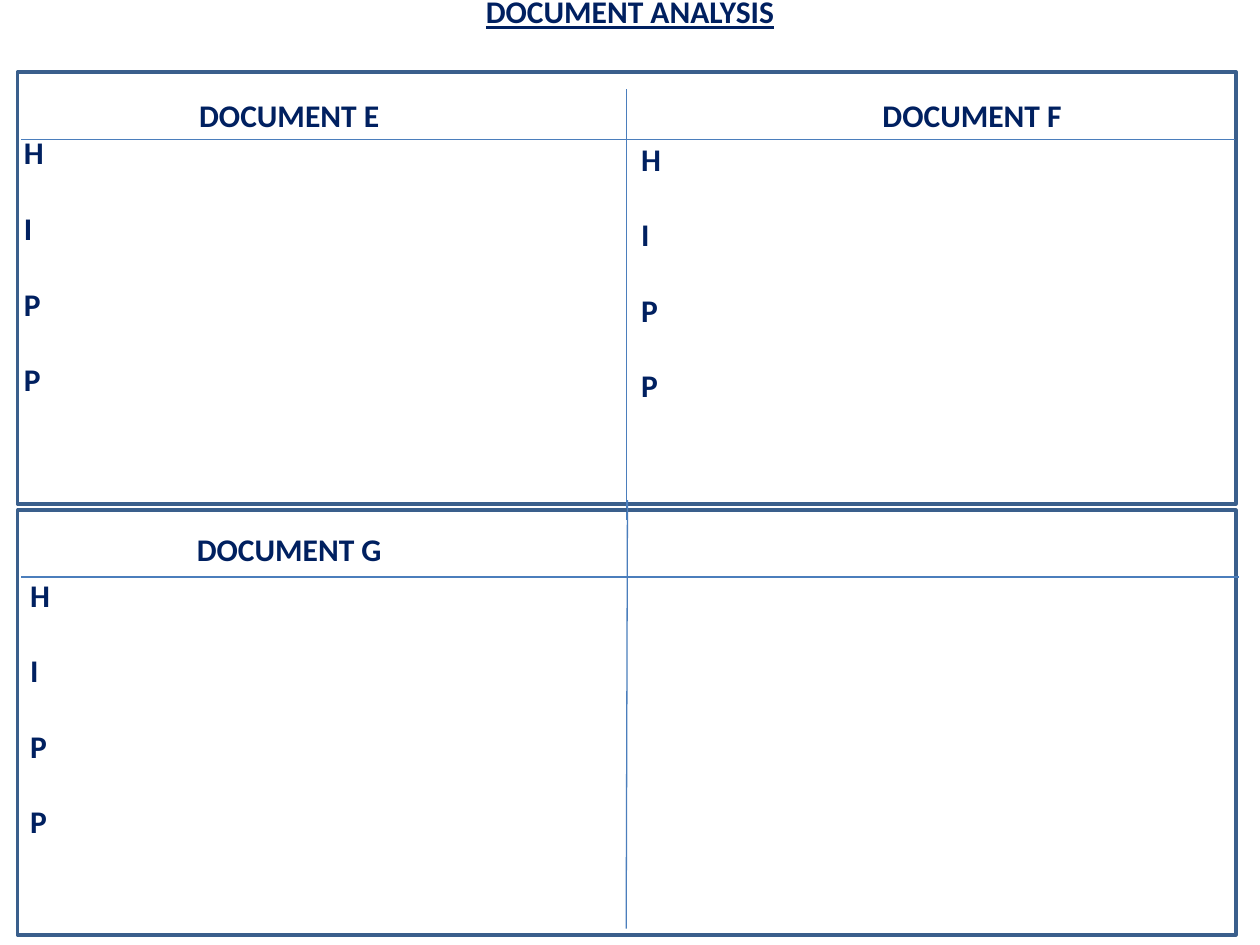
from lxml import etree
from pptx import Presentation
from pptx.dml.color import RGBColor
from pptx.enum.shapes import MSO_CONNECTOR, MSO_SHAPE
from pptx.enum.text import MSO_ANCHOR, MSO_AUTO_SIZE, PP_ALIGN
from pptx.oxml.ns import qn
from pptx.util import Inches, Pt

RECTANGLE, STRAIGHT = MSO_SHAPE.RECTANGLE, MSO_CONNECTOR.STRAIGHT
CENTER, LEFT, TOP = PP_ALIGN.CENTER, PP_ALIGN.LEFT, MSO_ANCHOR.TOP
NO_AUTOFIT = MSO_AUTO_SIZE.NONE
NAVY, BORDER, RULE = "002060", "3A5F8C", "4B7EBC"
PROMPTS = ["H", "I", "P", "P"]
TITLE_LAYOUT = 5


def color(value):
    return RGBColor.from_string(value)


def fill_text(shape, lines, alignment, gap=0, underline=None):
    frame = shape.text_frame
    frame.word_wrap = True
    frame.auto_size = NO_AUTOFIT
    frame.vertical_anchor = TOP
    frame.text = "\n".join(lines)
    for index, paragraph in enumerate(frame.paragraphs):
        paragraph.alignment = alignment
        paragraph.space_before = Pt(gap if index else 0)
        for run in paragraph.runs:
            run.font.name = "Calibri"
            run.font.size = Pt(18)
            run.font.bold = True
            run.font.underline = underline
            run.font.color.rgb = color(NAVY)


def add_text(slide, box, lines, alignment, gap=0):
    shape = slide.shapes.add_textbox(*map(Inches, box))
    fill_text(shape, lines, alignment, gap)


def add_rule(slide, *ends):
    line = slide.shapes.add_connector(STRAIGHT, *map(Inches, ends))
    line.line.color.rgb = color(RULE)
    line.line.width = Pt(0.75)
    etree.SubElement(line._element.spPr, qn("a:effectLst"))


def add_title(slide, box):
    title = slide.shapes.title
    title.left, title.top, title.width, title.height = map(Inches, box)
    fill_text(title, ["DOCUMENT ANALYSIS"], CENTER, underline=True)


def add_panel(slide, box, header_rule, divider, documents):
    """Framed panel; documents holds (heading, heading left and top, prompts left and top)."""
    frame = slide.shapes.add_shape(RECTANGLE, *map(Inches, box))
    frame.shadow.inherit = False
    frame.fill.background()
    frame.line.color.rgb = color(BORDER)
    frame.line.width = Pt(2)

    # Header rule and column divider
    add_rule(slide, *header_rule)
    add_rule(slide, *divider)

    # Headings and prompt letters
    for heading, heading_at, prompts_at in documents:
        add_text(slide, (*heading_at, 4.25, 0.4), [heading], CENTER)
        add_text(slide, (*prompts_at, 0.52, 2.83), PROMPTS, LEFT, gap=21.6)


def main():
    presentation = Presentation()
    presentation.slide_width = Inches(10)
    presentation.slide_height = Inches(7.5)
    slide = presentation.slides.add_slide(presentation.slide_layouts[TITLE_LAYOUT])

    add_title(slide, (0, -0.11, 10, 0.71))

    # Upper panel: two documents
    add_panel(slide, (0.14, 0.57, 9.67, 3.43),
              (0.17, 1.11, 9.8, 1.11), (4.97, 0.71, 4.97, 4.13),
              [("DOCUMENT E", (0.17, 0.71), (0.09, 1.01)),
               ("DOCUMENT F", (5.59, 0.71), (4.99, 1.06))])

    # Lower panel: one document and an empty column
    add_panel(slide, (0.14, 4.05, 9.67, 3.37),
              (0.17, 4.58, 9.83, 4.58), (4.98, 3.97, 4.97, 7.37),
              [("DOCUMENT G", (0.17, 4.16), (0.14, 4.52))])

    presentation.save("out.pptx")


if __name__ == "__main__":
    main()
